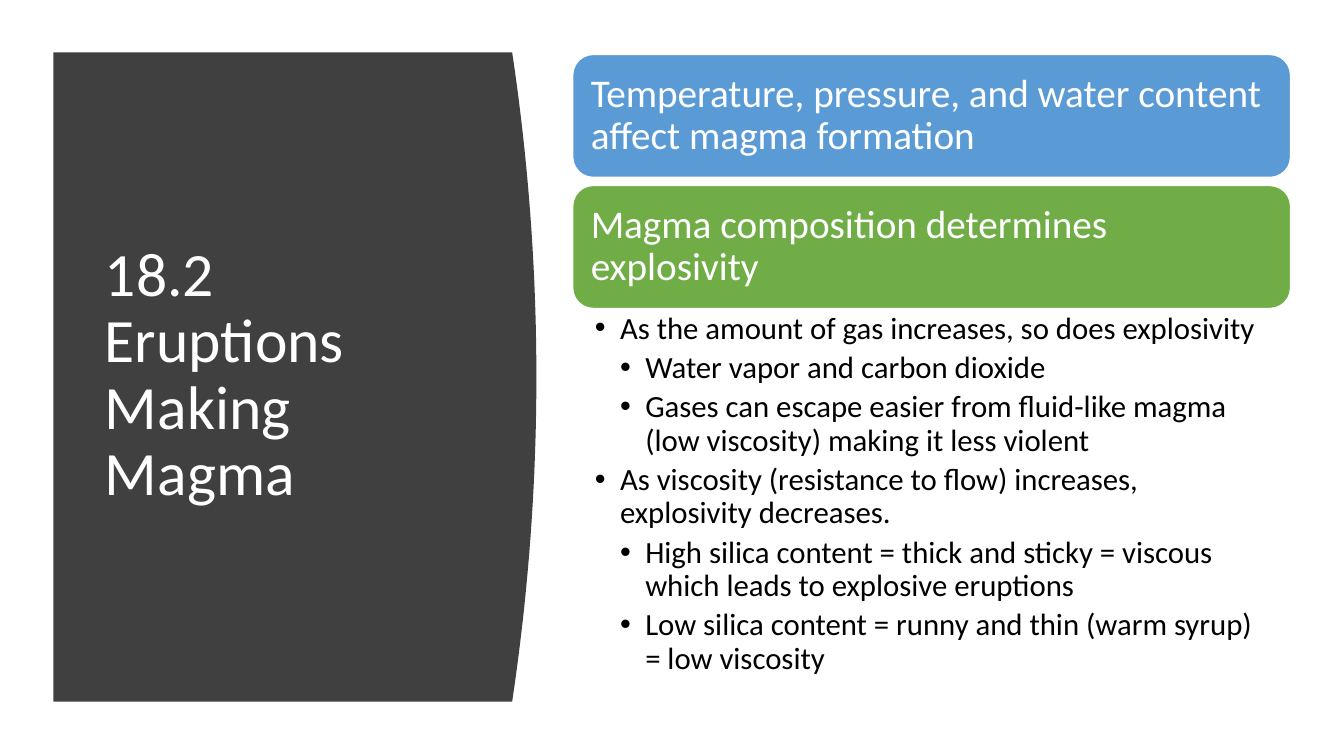
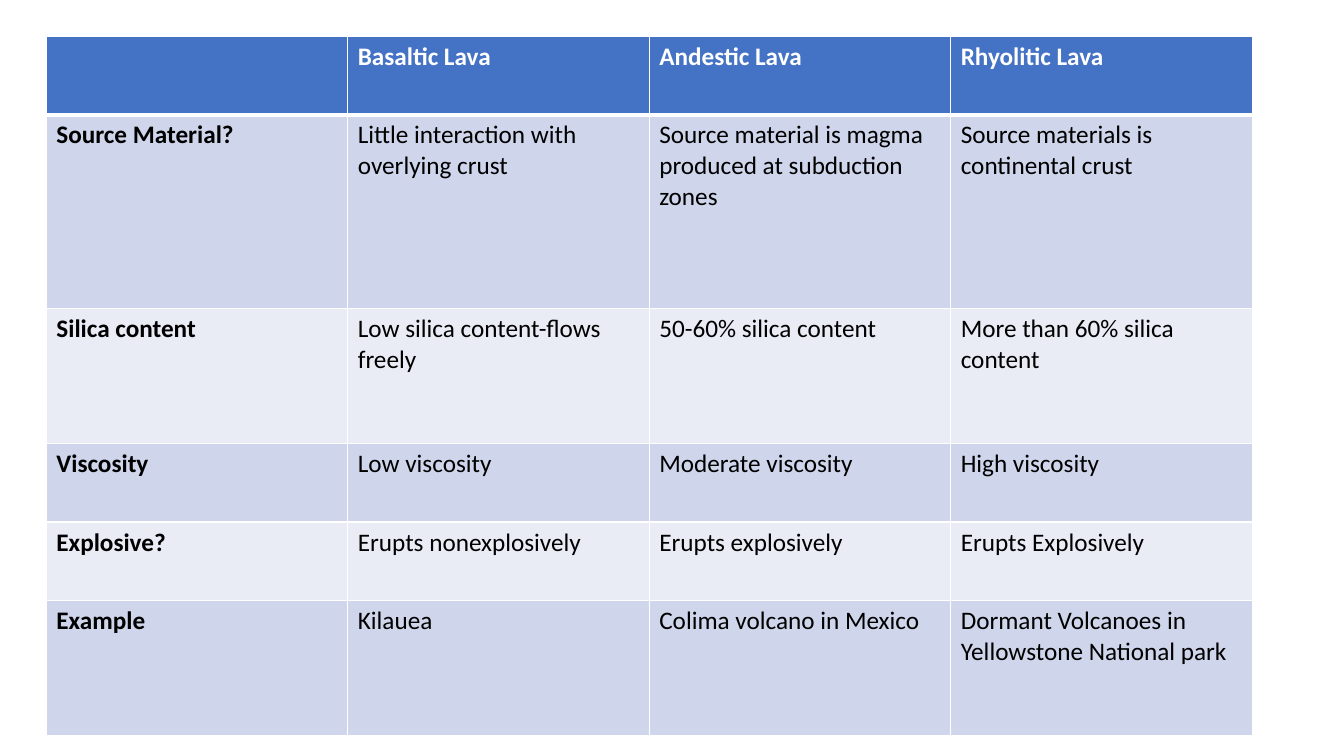
from dataclasses import dataclass
from typing import Optional

import pptx
import pptx.dml.color
import pptx.enum.shapes
import pptx.enum.text
import pptx.oxml
import pptx.oxml.ns
import pptx.util
from pptx.util import Inches

ANCHOR = pptx.enum.text.MSO_ANCHOR


# Theme: colours, font and type sizes
@dataclass(frozen=True)
class Theme:
    font: str = "Calibri"
    white: str = "FFFFFF"
    black: str = "000000"
    panel: str = "404040"
    blue: str = "5B9BD5"
    green: str = "70AD47"
    header: str = "4472C4"
    bands: tuple[str, str] = ("CFD5EA", "E9EBF5")
    title_size: int = 44
    card_size: int = 28
    list_size: int = 22
    table_size: int = 18


THEME = Theme()


@dataclass(frozen=True)
class Card:
    text: str
    fill: str
    top: float


@dataclass(frozen=True)
class Bullet:
    text: str
    level: int = 0


# Slide content
CARDS = [
    Card("Temperature, pressure, and water content affect magma formation", THEME.blue, 0.54),
    Card("Magma composition determines explosivity", THEME.green, 1.84),
]
BULLETS = [
    Bullet("As the amount of gas increases, so does explosivity"),
    Bullet("Water vapor and carbon dioxide", 1),
    Bullet("Gases can escape easier from fluid-like magma (low viscosity) making it less violent", 1),
    Bullet("As viscosity (resistance to flow) increases, explosivity decreases."),
    Bullet("High silica content = thick and sticky = viscous which leads to explosive eruptions", 1),
    Bullet("Low silica content = runny and thin (warm syrup) = low viscosity", 1),
]
LAVA_ROWS = [
    ("", "Basaltic Lava", "Andestic Lava", "Rhyolitic Lava"),
    ("Source Material?", "Little interaction with overlying crust",
     "Source material is magma produced at subduction zones",
     "Source materials is continental crust"),
    ("Silica content", "Low silica content-flows freely", "50-60% silica content",
     "More than 60% silica content"),
    ("Viscosity", "Low viscosity", "Moderate viscosity", "High viscosity"),
    ("Explosive?", "Erupts nonexplosively", "Erupts explosively", "Erupts Explosively"),
    ("Example", "Kilauea", "Colima volcano in Mexico",
     "Dormant Volcanoes in Yellowstone National park"),
]
ROW_HEIGHTS = [0.78, 1.92, 1.34, 0.78, 0.78, 1.34]
COLUMN_WIDTH = 2.99


# Shared helpers
def rgb(color: str) -> pptx.dml.color.RGBColor:
    return pptx.dml.color.RGBColor.from_string(color)


def write(p, text: str, *, size: int, color: str, bold: bool = False,
          spacing: Optional[float] = None, after: float = 0) -> None:
    """Fill a paragraph with left-aligned text; newlines become line breaks."""
    p.alignment = pptx.enum.text.PP_ALIGN.LEFT
    p.line_spacing = spacing
    p.space_before = pptx.util.Pt(0)
    p.space_after = pptx.util.Pt(after)
    for i, line in enumerate(text.split("\n")):
        if i:
            p.add_line_break()
        r = p.add_run()
        r.text = line
        r.font.name = THEME.font
        r.font.size = pptx.util.Pt(size)
        r.font.bold = bold
        r.font.color.rgb = rgb(color)


def place(sp, left: float, top: float, width: float, height: float) -> None:
    sp.left, sp.top = Inches(left), Inches(top)
    sp.width, sp.height = Inches(width), Inches(height)


def set_frame(tf, anchor, margin_x: float, margin_y: float) -> None:
    tf.word_wrap = True
    tf.auto_size = pptx.enum.text.MSO_AUTO_SIZE.NONE
    tf.vertical_anchor = anchor
    tf.margin_left = tf.margin_right = Inches(margin_x)
    tf.margin_top = tf.margin_bottom = Inches(margin_y)


def set_bullet(p, indent: float) -> None:
    pPr = p._p.get_or_add_pPr()
    pPr.set("marL", str(Inches(indent)))
    pPr.set("indent", str(Inches(-0.25)))
    bu = pptx.oxml.parse_xml(f'<a:buChar {pptx.oxml.ns.nsdecls("a")} char="•"/>')
    pPr.append(bu)


def set_borders(cell, top: int, bottom: int) -> None:
    widths = {"lnL": 1, "lnR": 1, "lnT": top, "lnB": bottom}
    tcPr = cell._tc.get_or_add_tcPr()
    for i, (side, points) in enumerate(widths.items()):
        tcPr.insert(i, pptx.oxml.parse_xml(
            f'<a:{side} {pptx.oxml.ns.nsdecls("a")} w="{pptx.util.Pt(points)}">'
            f'<a:solidFill><a:srgbClr val="{THEME.white}"/></a:solidFill></a:{side}>'))


# Slide parts
def add_panel(s):
    """Dark panel whose right edge bulges in a parabola."""
    left, top, bottom, edge, bulge, steps = 0.53, 0.52, 6.96, 5.08, 0.24, 40
    points = [(left, top)]
    for i in range(steps + 1):
        t = i / steps
        points.append((edge + bulge * 4 * t * (1 - t), top + (bottom - top) * t))
    points.append((left, bottom))
    outline = [(Inches(x), Inches(y)) for x, y in points]
    fb = s.shapes.build_freeform(*outline[0], scale=1.0)
    fb.add_line_segments(outline[1:], close=True)
    sp = fb.convert_to_shape()
    sp.shadow.inherit = False
    sp.fill.solid()
    sp.fill.fore_color.rgb = rgb(THEME.panel)
    sp.line.fill.background()
    return sp


def add_card(s, card: Card) -> None:
    sp = s.shapes.add_shape(pptx.enum.shapes.MSO_SHAPE.ROUNDED_RECTANGLE,
                            Inches(5.68), Inches(card.top), Inches(7.12), Inches(1.22))
    sp.shadow.inherit = False
    sp.fill.solid()
    sp.fill.fore_color.rgb = rgb(card.fill)
    sp.line.color.rgb = rgb(THEME.white)
    sp.line.width = pptx.util.Pt(1)
    set_frame(sp.text_frame, ANCHOR.MIDDLE, 0.12, 0.12)
    write(sp.text_frame.paragraphs[0], card.text, size=THEME.card_size,
          color=THEME.white, spacing=0.9)


def add_bullets(body, bullets: list[Bullet]) -> None:
    tf = body.text_frame
    set_frame(tf, ANCHOR.TOP, 0.22, 0.04)
    for i, bullet in enumerate(bullets):
        p = tf.add_paragraph() if i else tf.paragraphs[0]
        p.level = bullet.level
        write(p, bullet.text, size=THEME.list_size, color=THEME.black,
              spacing=0.9, after=4.4)
        set_bullet(p, 0.25 * (bullet.level + 1))


def build_magma_slide(prs) -> None:
    s = prs.slides.add_slide(prs.slide_layouts[1])
    title, body = s.shapes.title, s.placeholders[1]
    title.element.addprevious(add_panel(s).element)
    place(title, 0.94, 1.11, 3.74, 5.24)
    set_frame(title.text_frame, ANCHOR.MIDDLE, 0.1, 0.05)
    write(title.text_frame.paragraphs[0], "18.2 Eruptions\nMaking Magma",
          size=THEME.title_size, color=THEME.white, spacing=0.9)
    for card in CARDS:
        add_card(s, card)
    place(body, 5.68, 3.06, 7.12, 3.87)
    add_bullets(body, BULLETS)


def build_lava_slide(prs) -> None:
    s = prs.slides.add_slide(prs.slide_layouts[6])
    columns = len(LAVA_ROWS[0])
    table = s.shapes.add_table(len(LAVA_ROWS), columns, Inches(0.46), Inches(0.36),
                               Inches(COLUMN_WIDTH * columns),
                               Inches(sum(ROW_HEIGHTS))).table
    for column in table.columns:
        column.width = Inches(COLUMN_WIDTH)
    for i, (values, height) in enumerate(zip(LAVA_ROWS, ROW_HEIGHTS)):
        table.rows[i].height = Inches(height)
        is_header = i == 0
        for j, value in enumerate(values):
            cell = table.cell(i, j)
            cell.fill.solid()
            cell.fill.fore_color.rgb = rgb(THEME.header if is_header else THEME.bands[(i - 1) % 2])
            set_borders(cell, top=3 if i == 1 else 1, bottom=3 if is_header else 1)
            if value:
                write(cell.text_frame.paragraphs[0], value, size=THEME.table_size,
                      color=THEME.white if is_header else THEME.black,
                      bold=is_header or j == 0)


def main() -> None:
    prs = pptx.Presentation()
    prs.slide_width, prs.slide_height = Inches(13.33), Inches(7.5)
    build_magma_slide(prs)
    build_lava_slide(prs)
    prs.save("out.pptx")


if __name__ == "__main__":
    main()
